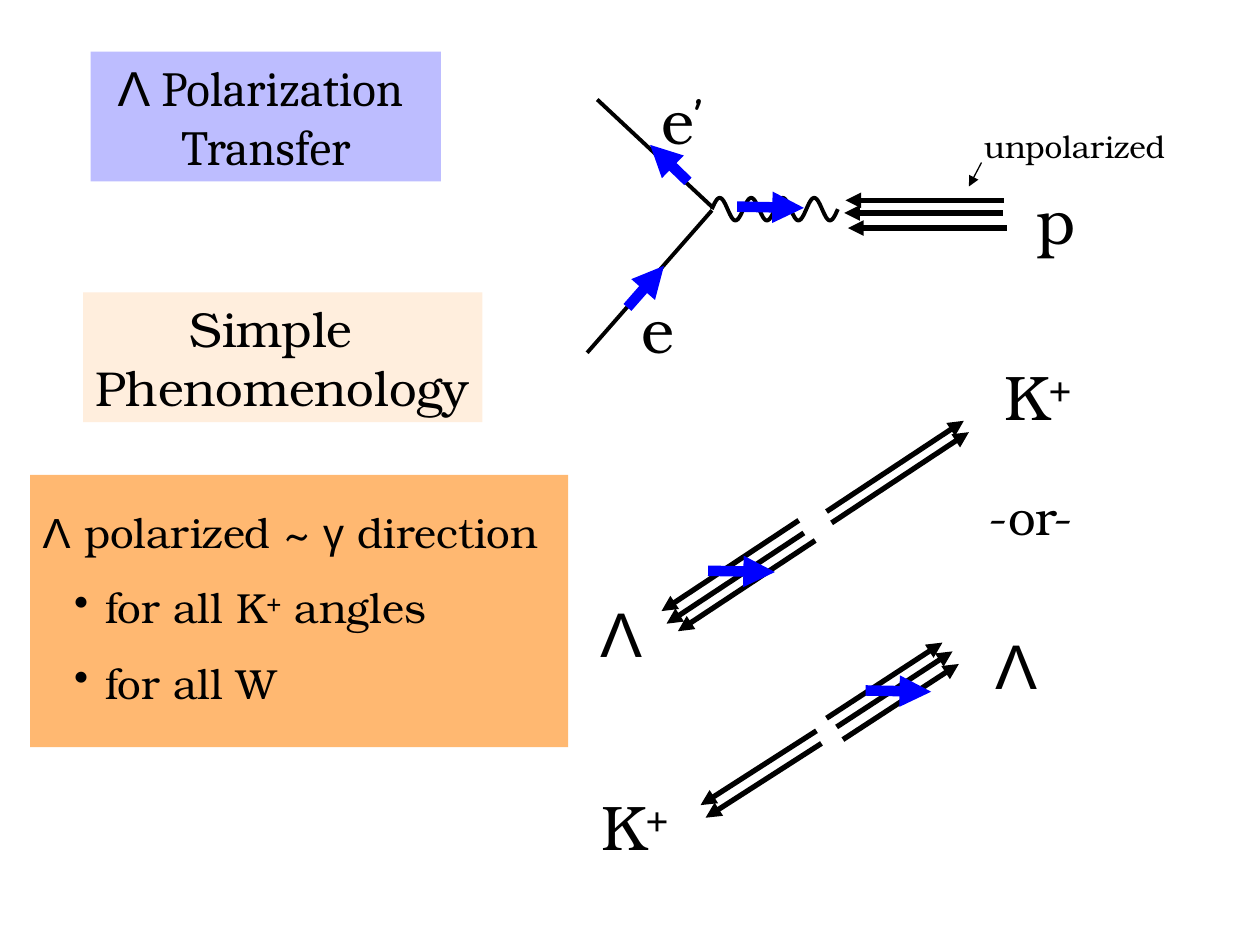
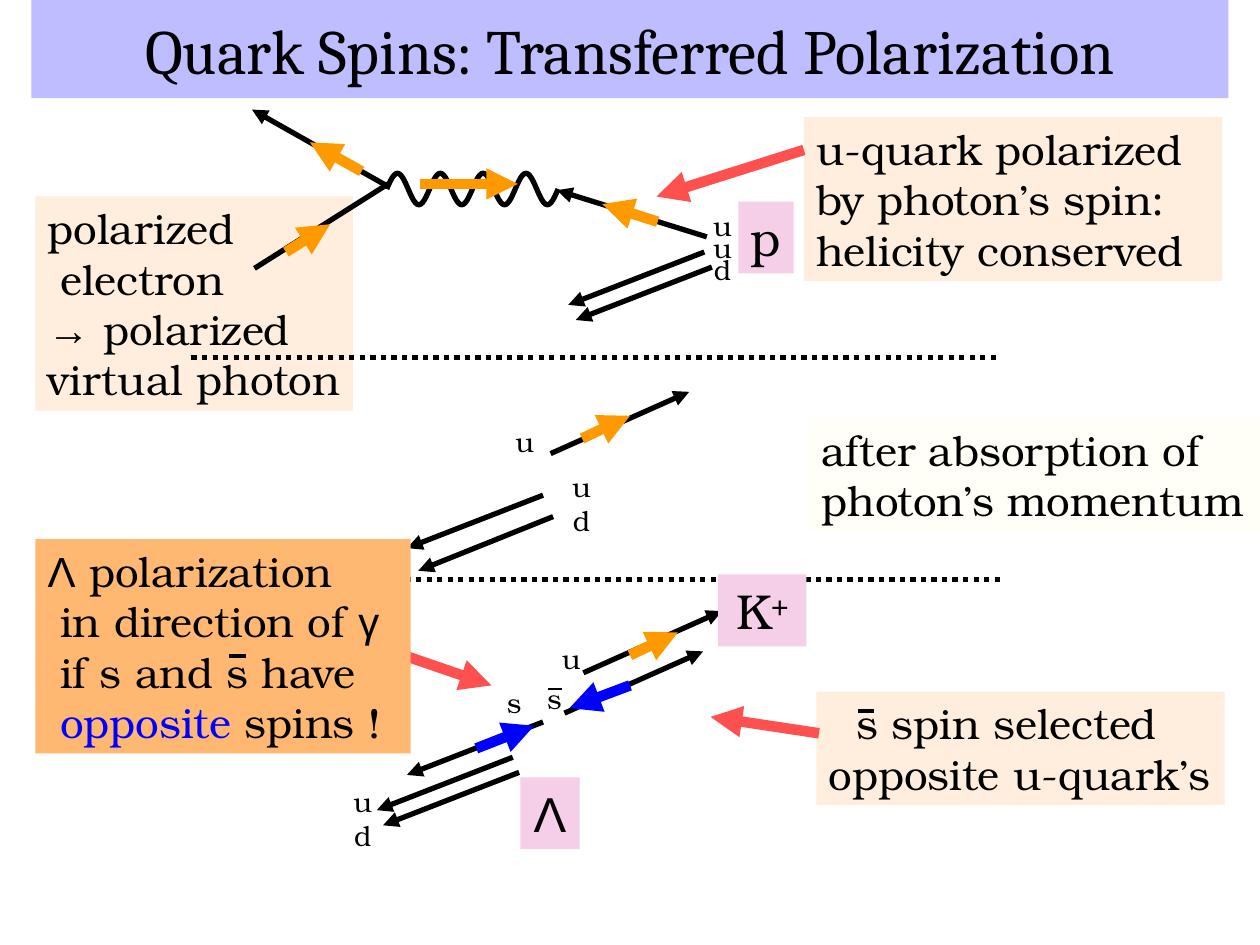
from dataclasses import dataclass
from math import pi, sin

from pptx import Presentation
from pptx.dml.color import RGBColor
from pptx.enum.dml import MSO_LINE_DASH_STYLE as Dash
from pptx.enum.shapes import MSO_CONNECTOR_TYPE as Connector, MSO_SHAPE as Shape
from pptx.enum.text import MSO_ANCHOR as Anchor, MSO_AUTO_SIZE as AutoSize, PP_ALIGN as Align
from pptx.oxml.ns import qn
from pptx.util import Cm, Pt

UNIT = 2.54  # the slide is a grid of 10 by 7.5 units, in cm
BODY, TITLE, SYMBOL, PRIME = "TeX Gyre Bonum", "Cambria", "Arial", "Comic Neue"
BLACK, BLUE, ORANGE, RED = "000000", "0000FF", "FF9900", "FF5050"
LAVENDER, PEACH, APRICOT, PINK, IVORY = "BDBDFF", "FFEEDD", "FFB871", "F5CFE7", "FFFFF7"


@dataclass
class Run:
    text: str
    font: str = BODY
    color: str = BLACK
    raised: bool = False


@dataclass
class Line:
    runs: list
    indent: float = 0
    bullet: bool = False


def symbol(text):
    return Run(text, SYMBOL)


LAMBDA = [symbol("Λ")]
KAON = ["K", Run("+", raised=True)]


def grid(value):
    return Cm(value * UNIT)


def rgb(color):
    return RGBColor.from_string(color)


class Sketch:
    """Holds the deck style and the slide being drawn."""

    def __init__(self, deck):
        self.deck = deck
        self.shapes = None

    def new_page(self):
        self.shapes = self.deck.slides.add_slide(self.deck.slide_layouts[6]).shapes

    def text(self, at, lines, size, fill=None, align=Align.CENTER, wrap=False,
             spacing=None, anchor=Anchor.TOP):
        """Text box, or a filled rectangle when a fill is given."""
        place = [grid(value) for value in at]
        if fill:
            box = self.shapes.add_shape(Shape.RECTANGLE, *place)
            box.shadow.inherit = False
            box.fill.solid()
            box.fill.fore_color.rgb = rgb(fill)
            box.line.fill.background()
        else:
            box = self.shapes.add_textbox(*place)
        frame = box.text_frame
        frame.word_wrap = wrap
        frame.auto_size = AutoSize.NONE if anchor == Anchor.MIDDLE else AutoSize.SHAPE_TO_FIT_TEXT
        frame.vertical_anchor = anchor
        for index, line in enumerate(lines):
            para = frame.paragraphs[0] if index == 0 else frame.add_paragraph()
            para.alignment = align
            if spacing:
                para.line_spacing = spacing
            self.fill_line(para, line if isinstance(line, Line) else Line(line), size)

    def fill_line(self, para, line, size):
        if line.indent:
            props = para._p.get_or_add_pPr()
            props.set("marL", str(grid(line.indent)))
            props.set("indent", str(-grid(0.25) if line.bullet else 0))
            if line.bullet:
                bullet = props.makeelement(qn("a:buChar"), {"char": "•"})
                props.append(bullet)
        for run in line.runs:
            run = run if isinstance(run, Run) else Run(run)
            span = para.add_run()
            span.text = run.text
            span.font.size = Pt(size)
            span.font.name = run.font
            span.font.color.rgb = rgb(run.color)
            if run.raised:
                span.font._element.set("baseline", "30000")

    def note(self, at, lines, fill=PEACH, size=24, **options):
        self.text(at, lines, size, fill, Align.LEFT, **options)

    def line(self, start, end, color=BLACK, width=3.0, head=False, dotted=False):
        ends = [grid(value) for value in (*start, *end)]
        stroke = self.shapes.add_connector(Connector.STRAIGHT, *ends)
        stroke.line.color.rgb = rgb(color)
        stroke.line.width = Pt(width)
        if dotted:
            stroke.line.dash_style = Dash.ROUND_DOT
        props = stroke._element.spPr
        if head:
            outline = stroke.line._get_or_add_ln()
            outline.append(outline.makeelement(qn("a:tailEnd"), {"type": "triangle"}))
        props.append(props.makeelement(qn("a:effectLst"), {}))

    def arrow(self, start, end, color=BLACK, width=3.0):
        self.line(start, end, color, width, head=True)

    def spin(self, start, end, color):
        self.arrow(start, end, color, 6)

    def tracks(self, step, starts):
        """Parallel arrows that share one direction and length."""
        for x, y in starts:
            self.arrow((x, y), (x + step[0], y + step[1]))

    def photon(self, left, middle, period, height, width, cycles=4, samples=24):
        """Wavy line that starts with a crest."""
        points = [(grid(left + period * i / samples),
                   grid(middle - height * sin(2 * pi * i / samples)))
                  for i in range(cycles * samples + 1)]
        builder = self.shapes.build_freeform(*points[0])
        builder.add_line_segments(points[1:], close=False)
        wave = builder.convert_to_shape()
        wave.shadow.inherit = False
        wave.fill.background()
        wave.line.color.rgb = rgb(BLACK)
        wave.line.width = Pt(width)


def draw_phenomenology(sketch):
    sketch.new_page()

    # Electron scattering off the proton
    sketch.photon(5.65, 1.66, 0.25, 0.09, 2.25)
    sketch.line((5.65, 1.67), (4.66, 2.8), width=2.25)
    sketch.line((5.66, 1.65), (4.74, 0.79), width=2.25)
    sketch.tracks((-1.26, 0), [(7.96, 1.69), (7.97, 1.59), (7.99, 1.81)])
    sketch.text((8.13, 1.39, 0.51, 0.7), [["p"]], 36, align=Align.LEFT)
    sketch.text((4.99, 2.26, 0.46, 0.7), [["e"]], 36, align=Align.LEFT)
    sketch.text((5.15, 0.6, 0.57, 0.7), [["e", Run("’", PRIME)]], 36, align=Align.LEFT)
    sketch.spin((4.98, 2.44), (5.27, 2.11), BLUE)
    sketch.spin((5.46, 1.44), (5.16, 1.15), BLUE)
    sketch.spin((5.85, 1.64), (6.38, 1.65), BLUE)
    sketch.text((7.71, 0.96, 1.64, 0.4), [["unpolarized"]], 18, align=Align.LEFT)
    sketch.arrow((7.79, 1.29), (7.69, 1.48), width=0.75)

    # Lambda forward, kaon backward
    sketch.tracks((0.92, -0.6), [(6.64, 5.77), (6.69, 5.87), (6.56, 5.7)])
    sketch.tracks((-0.92, 0.59), [(6.52, 5.9), (6.48, 5.8)])
    sketch.text((4.66, 6.2, 0.76, 0.7), [KAON], 36)
    sketch.text((7.79, 4.92, 0.55, 0.7), [LAMBDA], 36)

    # Kaon forward, lambda backward
    sketch.tracks((-1.09, 0.72), [(6.38, 4.23), (6.34, 4.13), (6.47, 4.29)])
    sketch.tracks((1.09, -0.72), [(6.56, 4.06), (6.6, 4.15)])
    sketch.text((7.86, 2.79, 0.76, 0.7), [KAON], 36)
    sketch.text((4.66, 4.67, 0.55, 0.7), [LAMBDA], 36)

    sketch.spin((6.87, 5.48), (7.39, 5.49), BLUE)
    sketch.spin((5.62, 4.53), (6.15, 4.54), BLUE)
    sketch.text((7.73, 3.81, 0.9, 0.57), [["-or-"]], 28)

    # Headings and conclusion
    sketch.text((0.72, 0.41, 2.78, 1.03),
                [[symbol("Λ "), Run("Polarization ", TITLE)], [Run("Transfer", TITLE)]],
                28, LAVENDER)
    sketch.note((0.24, 3.77, 4.27, 2.16),
                [[symbol("Λ"), " polarized ~ ", symbol("γ"), " direction"],
                 Line(["for all ", *KAON, " angles"], 0.5, True),
                 Line(["for all W"], 0.5, True)],
                APRICOT, wrap=True, spacing=1.5)
    sketch.note((0.66, 2.32, 3.17, 1.03),
                [Line(["Simple"], 0.75), ["Phenomenology"]], size=28)


def draw_quark_spins(sketch):
    sketch.new_page()

    # Title band and electron note
    sketch.note((0.28, 1.56, 2.52, 1.7),
                [["polarized"], Line(["electron"], 0.1),
                 [symbol("→"), " polarized"], ["virtual photon"]])
    sketch.text((0.25, 0, 9.5, 0.78), [[Run("Quark Spins: Transferred Polarization", TITLE)]],
                36, LAVENDER, wrap=True, anchor=Anchor.MIDDLE)

    # Quark tracks, photon and stage dividers
    sketch.tracks((1.1, -0.49), [(4.37, 3.6), (4.63, 5.34), (4.48, 5.66)])
    sketch.tracks((-1.08, 0.42), [(4.31, 3.93), (4.31, 5.73), (4.07, 6.01), (4.12, 6.13),
                                  (5.65, 2.12), (5.59, 2)])
    sketch.photon(3.07, 1.5, 0.34, 0.125, 3)
    sketch.arrow((5.61, 1.88), (4.42, 1.51))
    for left, y in ((1.52, 2.84), (1.55, 4.6)):
        sketch.line((left, y), (left + 6.41, y), dotted=True)

    # Quark and particle labels
    sketch.text((5.56, 1.69, 0.35, 0.62), [["u"], ["u"], ["d"]], 16, spacing=0.65)
    sketch.text((5.86, 1.6, 0.44, 0.57), [["p"]], 28, PINK)
    for left, top, quark in ((3.99, 3.32, "u"), (4.36, 5.04, "u"),
                             (4.24, 5.36, "s"), (3.92, 5.39, "s")):
        sketch.text((left, top, 0.35 if quark == "u" else 0.32, 0.37), [[quark]], 16)
    sketch.text((4.44, 3.68, 0.35, 0.64), [["u"], ["d"]], 16)
    sketch.line((4.35, 5.47), (4.46, 5.47), width=1.5)
    sketch.text((4.13, 6.17, 0.47, 0.57), [LAMBDA], 28, PINK)
    sketch.text((5.7, 4.56, 0.7, 0.57), [KAON], 28, PINK, wrap=True)
    sketch.note((6.38, 0.93, 3.32, 1.3),
                [["u-quark polarized"], ["by photon’s spin:"], ["helicity conserved"]])
    sketch.note((6.42, 3.32, 3.58, 0.9),
                [["after absorption of"], ["photon’s momentum"]], IVORY)
    sketch.text((2.67, 6.18, 0.42, 0.9), [["u"], ["d"]], 16, wrap=True)

    # Electron lines and spins
    sketch.line((2.02, 2.13), (3.08, 1.46))
    sketch.arrow((4.39, 4.1), (3.32, 4.53))
    sketch.arrow((3.08, 1.48), (2, 0.87))
    for start, end in (((2.27, 2), (2.62, 1.78)), ((2.87, 1.36), (2.46, 1.13)),
                       ((3.33, 1.46), (4.11, 1.46)), ((5.22, 1.76), (4.78, 1.62)),
                       ((4.62, 3.48), (5, 3.3)), ((5, 5.2), (5.38, 5.02))):
        sketch.spin(start, end, ORANGE)
    sketch.spin((5, 5.44), (4.52, 5.62), BLUE)
    sketch.spin((3.78, 5.94), (4.24, 5.76), BLUE)

    # Conclusions with pointers and antiquark bars
    sketch.note((6.48, 5.49, 3.24, 0.9),
                [Line(["s spin selected"], 0.22), ["opposite u-quark’s"]])
    sketch.line((6.81, 5.64), (6.94, 5.64), width=2.25)
    sketch.spin((6.5, 5.82), (5.64, 5.69), RED)
    sketch.spin((6.38, 1.19), (5.21, 1.56), RED)
    sketch.spin((3.23, 5.21), (3.9, 5.44), RED)
    sketch.note((0.28, 4.28, 2.98, 1.7),
                [[symbol("Λ"), " polarization"],
                 Line(["in direction of ", symbol("γ")], 0.1),
                 Line(["if s and s have"], 0.1),
                 Line([Run("opposite", color=BLUE), " spins !"], 0.1)],
                APRICOT, wrap=True)
    sketch.line((1.82, 5.21), (1.95, 5.21), width=2.25)


def main():
    deck = Presentation()
    deck.slide_width, deck.slide_height = grid(10), grid(7.5)
    sketch = Sketch(deck)
    draw_phenomenology(sketch)
    draw_quark_spins(sketch)
    deck.save("out.pptx")


if __name__ == "__main__":
    main()
